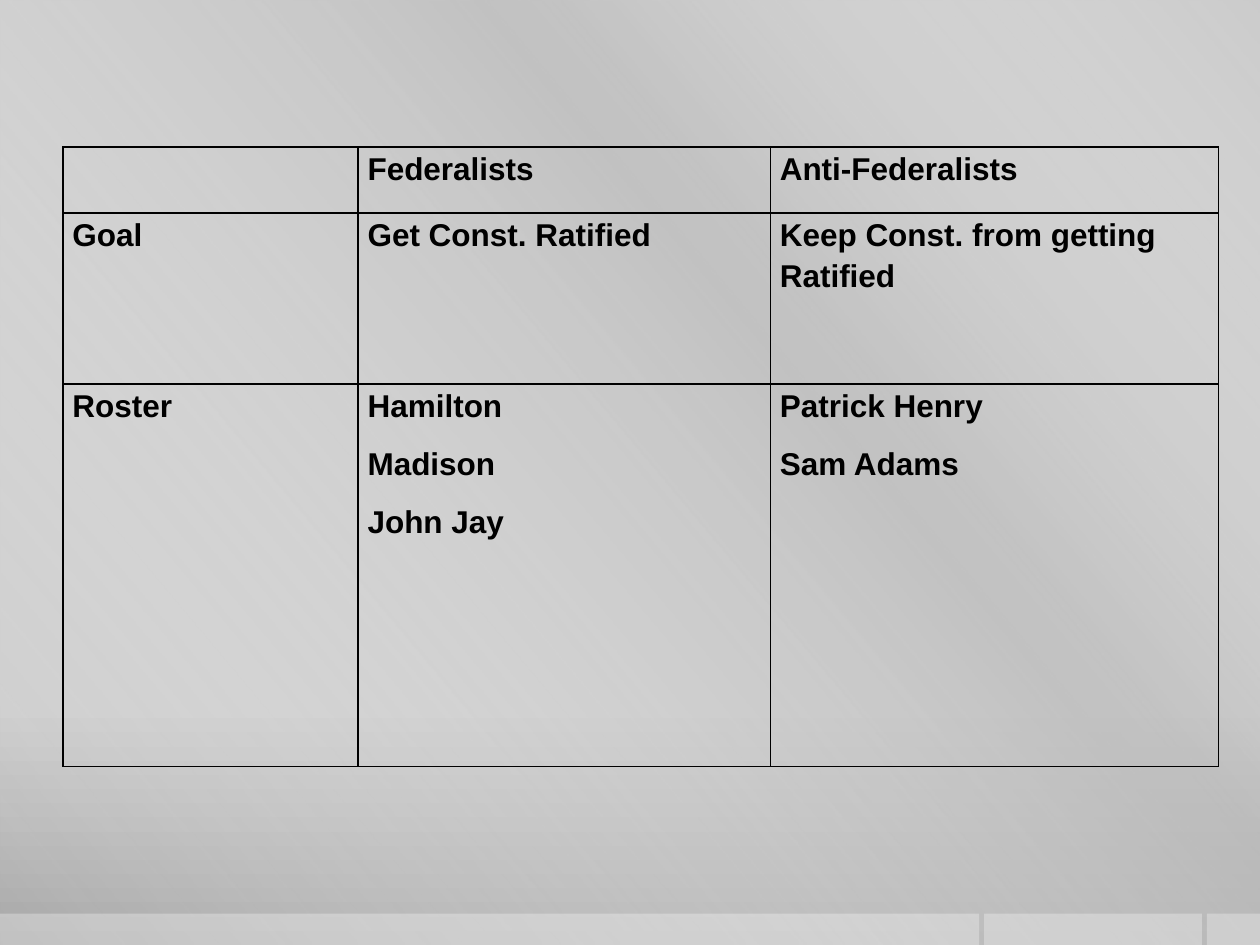
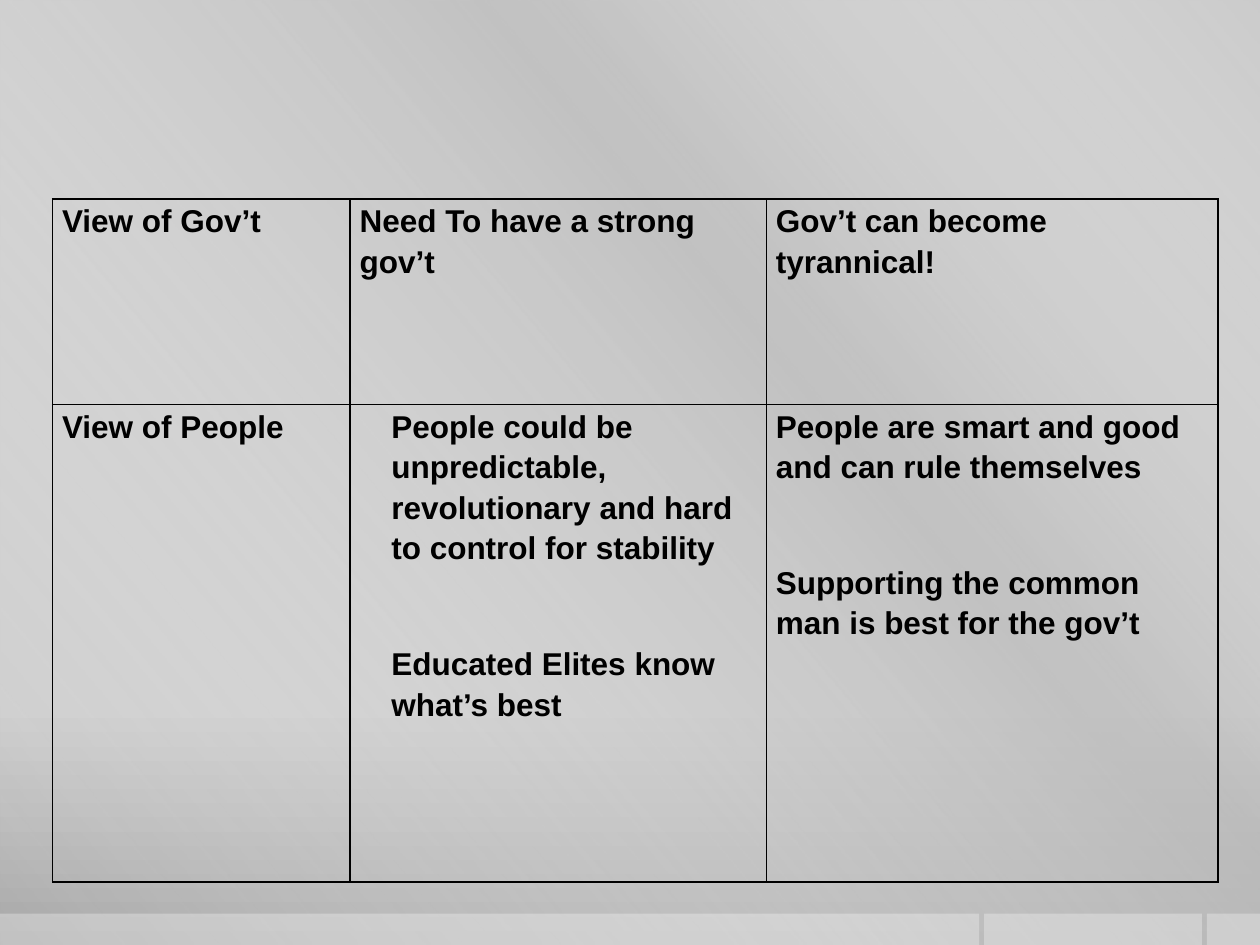
from dataclasses import dataclass

from lxml.etree import SubElement
from pptx import Presentation
from pptx.dml.color import RGBColor
from pptx.enum.shapes import MSO_SHAPE as Shape
from pptx.oxml import parse_xml
from pptx.oxml.ns import nsdecls, qn
from pptx.util import Cm, Pt

FONT = "Arial"
INK = "000000"
PALE = "FFFFFF"
SHADE = "BFBFBF"
SLIDE_WIDTH, SLIDE_HEIGHT = 25.4, 19.05
BAND_TOP = 18.42


@dataclass(frozen=True)
class Stop:
    position: int
    color: str
    opacity: int = 100


@dataclass(frozen=True)
class Band:
    left: float
    width: float


@dataclass(frozen=True)
class Entry:
    """Text of one cell: paragraphs, their indent in cm and extra gap in points."""
    paragraphs: tuple[str, ...] = ()
    indent: float = 0
    gap: float = 0


@dataclass(frozen=True)
class Comparison:
    left: float
    top: float
    columns: tuple[float, ...]
    rows: tuple[float, ...]
    entries: tuple[tuple[Entry, ...], ...]


BACKGROUND = (Stop(0, "CBCBCB"), Stop(76, "C8C8C8"), Stop(100, "A7A7A7"))
SHEEN = (Stop(0, PALE, 0), Stop(34, SHADE, 61), Stop(38, SHADE, 76), Stop(100, PALE, 0))
BANDS = (Band(24.33, 1.07), Band(19.84, 4.39), Band(0, 19.74))

COMPARISONS = (
    Comparison(
        1.27, 2.96, (5.95, 8.31, 9.03), (1.33, 3.45, 7.71),
        (
            (Entry(), Entry(("Federalists",)), Entry(("Anti-Federalists",))),
            (Entry(("Goal",)), Entry(("Get Const. Ratified",)),
             Entry(("Keep Const. from getting Ratified",))),
            (Entry(("Roster",)), Entry(("Hamilton", "Madison", "John Jay")),
             Entry(("Patrick Henry", "Sam Adams"))),
        ),
    ),
    Comparison(
        1.06, 4.01, (6, 8.39, 9.1), (4.14, 9.63),
        (
            (Entry(("View of Gov’t",)), Entry(("Need To have a strong gov’t",)),
             Entry(("Gov’t can become tyrannical!",))),
            (Entry(("View of People",)),
             Entry(("People could be unpredictable, revolutionary and hard to control "
                    "for stability", "Educated Elites know what’s best"), 0.64, 33),
             Entry(("People are smart and good and can rule themselves",
                    "Supporting the common man is best for the gov’t"), gap=33)),
        ),
    ),
)


def rgb(color: str) -> RGBColor:
    return RGBColor.from_string(color)


def set_opacity(color_element, percent: int) -> None:
    SubElement(color_element, qn("a:alpha")).set("val", str(percent * 1000))


def fill_gradient(fill, owner, stops: tuple[Stop, ...], clockwise: int) -> None:
    """Give the fill, held in the owner element, these stops and this direction."""
    fill.gradient()
    fill.gradient_angle = 360 - clockwise
    stop_list = next(owner.iter(qn("a:gsLst")))
    for preset_stop in list(stop_list):
        stop_list.remove(preset_stop)
    for stop in stops:
        node = SubElement(stop_list, qn("a:gs"), pos=str(stop.position * 1000))
        color = SubElement(node, qn("a:srgbClr"), val=stop.color)
        if stop.opacity < 100:
            set_opacity(color, stop.opacity)


def add_backdrop(prs, slide, layout) -> None:
    """Draw the shared background and move its shapes to the layout."""
    master = prs.slide_master
    fill_gradient(master.background.fill, master.element, BACKGROUND, 90)

    def add_panel(left: float, top: float, width: float, height: float):
        panel = slide.shapes.add_shape(
            Shape.RECTANGLE, Cm(left), Cm(top), Cm(width), Cm(height))
        panel.shadow.inherit = False
        panel.line.fill.background()
        layout.shapes.element.append(panel.element)
        return panel

    sheen = add_panel(0, 0, SLIDE_WIDTH, SLIDE_HEIGHT)
    fill_gradient(sheen.fill, sheen.element, SHEEN, 140)
    for band in BANDS:
        strip = add_panel(band.left, BAND_TOP, band.width, SLIDE_HEIGHT - BAND_TOP)
        strip.fill.solid()
        strip.fill.fore_color.rgb = rgb(PALE)
        set_opacity(next(strip.element.iter(qn("a:srgbClr"))), 30)


def write(paragraph, text: str, *, size: float = 18, color: str = INK,
          bold: bool = True, indent: float = 0, before: float = 0) -> None:
    if indent:
        paragraph._p.get_or_add_pPr().set("marL", str(Cm(indent)))
    paragraph.line_spacing = 1.15
    paragraph.space_before = Pt(before)
    paragraph.space_after = Pt(10)
    run = paragraph.add_run()
    run.text = text
    run.font.name = FONT
    run.font.size = Pt(size)
    run.font.bold = bold
    run.font.color.rgb = rgb(color)


def set_borders(cell, color: str = INK, width: float = 1) -> None:
    properties = cell._tc.get_or_add_tcPr()
    for index, side in enumerate("LRTB"):
        properties.insert(index, parse_xml(
            f'<a:ln{side} {nsdecls("a")} w="{Pt(width)}"><a:solidFill>'
            f'<a:srgbClr val="{color}"/></a:solidFill></a:ln{side}>'))


def fill_cell(cell, entry: Entry) -> None:
    cell.margin_left = cell.margin_right = Cm(0.19)
    cell.margin_top = cell.margin_bottom = Cm(0)
    cell.fill.background()
    set_borders(cell)
    frame = cell.text_frame
    for index, text in enumerate(entry.paragraphs):
        paragraph = frame.add_paragraph() if index else frame.paragraphs[0]
        write(paragraph, text, indent=entry.indent, before=entry.gap if index else 0)


def add_comparison(slide, comparison: Comparison) -> None:
    table = slide.shapes.add_table(
        len(comparison.rows), len(comparison.columns),
        Cm(comparison.left), Cm(comparison.top),
        Cm(sum(comparison.columns)), Cm(sum(comparison.rows))).table
    table.first_row = table.horz_banding = False
    for column, width in zip(table.columns, comparison.columns):
        column.width = Cm(width)
    for row, height, entries in zip(table.rows, comparison.rows, comparison.entries):
        row.height = Cm(height)
        for cell, entry in zip(row.cells, entries):
            fill_cell(cell, entry)


def main() -> None:
    prs = Presentation()
    prs.slide_width, prs.slide_height = Cm(SLIDE_WIDTH), Cm(SLIDE_HEIGHT)
    layout = prs.slide_layouts[6]
    slides = [prs.slides.add_slide(layout) for _ in COMPARISONS]
    add_backdrop(prs, slides[0], layout)
    for slide, comparison in zip(slides, COMPARISONS):
        add_comparison(slide, comparison)
    prs.save("out.pptx")


if __name__ == "__main__":
    main()
